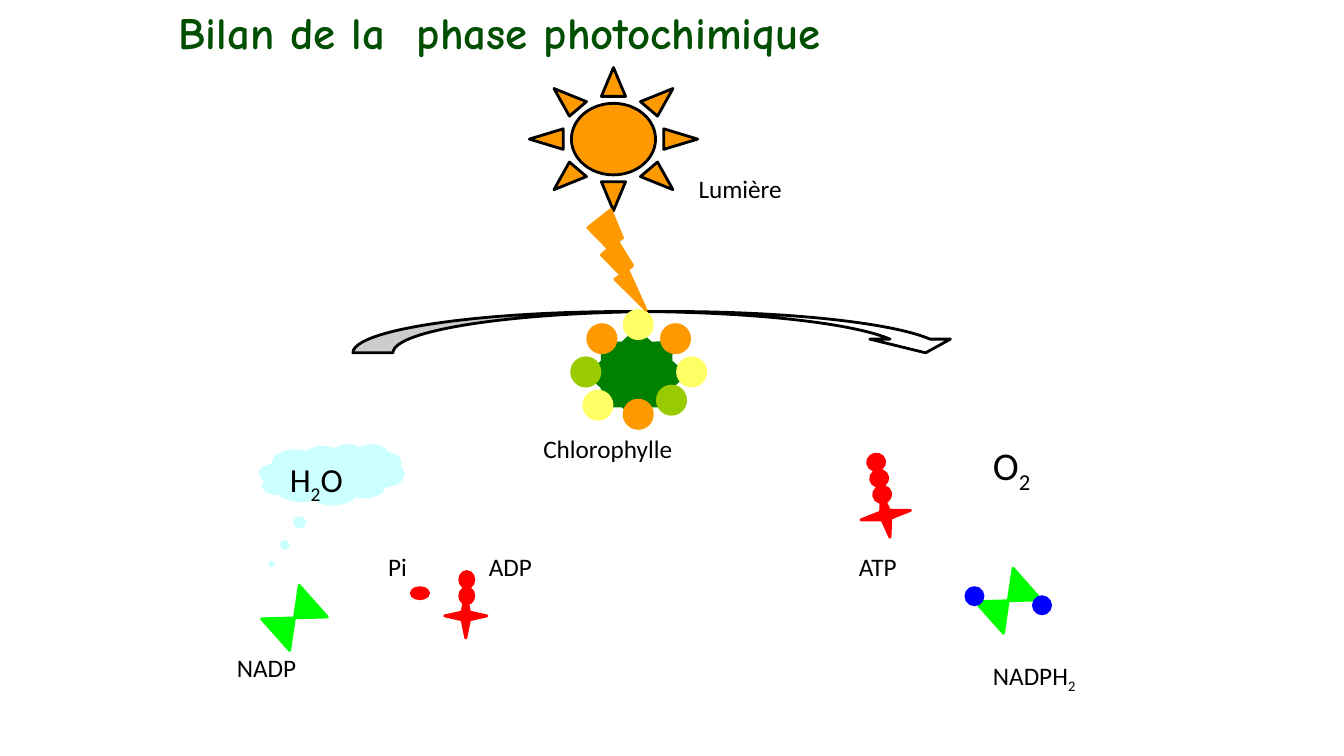
"""Draw the summary slide of the photochemical phase of photosynthesis."""
import pptx
import pptx.dml.color
import pptx.enum.shapes
import pptx.enum.text
import pptx.util

Inches = pptx.util.Inches
RGBColor = pptx.dml.color.RGBColor
Shape = pptx.enum.shapes.MSO_SHAPE

BLACK = RGBColor(0x00, 0x00, 0x00)
WHITE = RGBColor(0xFF, 0xFF, 0xFF)
TITLE_GREEN = RGBColor(0x00, 0x4E, 0x00)
LEAF_GREEN = RGBColor(0x00, 0x80, 0x00)
BRIGHT_GREEN = RGBColor(0x00, 0xFF, 0x00)
LIME = RGBColor(0x99, 0xCC, 0x00)
ORANGE = RGBColor(0xFF, 0x99, 0x00)
YELLOW = RGBColor(0xFF, 0xFF, 0x66)
RED = RGBColor(0xFF, 0x00, 0x00)
BLUE = RGBColor(0x00, 0x00, 0xFF)
WATER = RGBColor(0xCC, 0xFF, 0xFF)


class Diagram:
    """Hold the fonts, the current slide and the group being filled."""

    title_font = "Comic Neue"
    body_font = "Calibri"
    line_width = pptx.util.Pt(2)

    def __init__(self, deck):
        self.page = deck.slides.add_slide(deck.slide_layouts[5])
        self.shapes = self.page.shapes

    def start_group(self):
        self.shapes = self.page.shapes.add_group_shape().shapes

    def title(self, text, left, top, width, height):
        box = self.page.shapes.title
        box.left, box.top = Inches(left), Inches(top)
        box.width, box.height = Inches(width), Inches(height)
        box.fill.solid()
        box.fill.fore_color.rgb = WHITE
        self.add_text(box, [text], 32, self.title_font, TITLE_GREEN, True)

    def add_text(self, box, pieces, size, font=body_font, color=BLACK, bold=False):
        frame = box.text_frame
        frame.vertical_anchor = pptx.enum.text.MSO_ANCHOR.TOP
        para = frame.paragraphs[0]
        para.alignment = pptx.enum.text.PP_ALIGN.LEFT
        for piece in pieces:
            span = para.add_run()
            span.text = piece
            span.font.name = font
            span.font.size = pptx.util.Pt(size)
            span.font.bold = bold
            span.font.color.rgb = color
            if piece.isdigit():
                span.font._element.set("baseline", "-25000")

    def shape(self, kind, left, top, width, height, fill, line=None,
              rotation=0, adjustments=()):
        item = self.shapes.add_shape(
            kind, Inches(left), Inches(top), Inches(width), Inches(height))
        item.shadow.inherit = False
        item.fill.solid()
        item.fill.fore_color.rgb = fill
        item.line.color.rgb = fill if line is None else line
        item.line.width = self.line_width
        item.rotation = rotation
        for index, value in enumerate(adjustments):
            item.adjustments[index] = value
        return item

    def label(self, pieces, left, top, width, height=0.41, size=18):
        box = self.shapes.add_textbox(
            Inches(left), Inches(top), Inches(width), Inches(height))
        box.text_frame.word_wrap = False
        box.text_frame.auto_size = pptx.enum.text.MSO_AUTO_SIZE.SHAPE_TO_FIT_TEXT
        self.add_text(box, pieces, size)

    def carrier(self, left, top):
        self.shape(Shape.FLOWCHART_COLLATE, left, top, 0.42, 0.5, BRIGHT_GREEN,
                   rotation=48.4)

    def adenosine(self, left, top, width, height, rotation):
        self.shape(Shape.STAR_4_POINT, left, top, width, height, RED,
                   rotation=rotation, adjustments=[0.125])

    def phosphates(self, count, left, top, step, height, rotation):
        for index in range(count):
            self.shape(Shape.OVAL, left - step * index, top - 0.16 * index,
                       0.16, height, RED, rotation=rotation)


def draw_products(diagram):
    diagram.start_group()
    diagram.carrier(9.79, 5.71)
    for left, top in [(9.58, 5.83), (10.25, 5.92)]:
        diagram.shape(Shape.OVAL, left, top, 0.17, 0.17, BLUE)
    diagram.adenosine(8.56, 4.86, 0.45, 0.5, 259.1)
    diagram.phosphates(3, 8.67, 4.82, 0.03, 0.17, 259.1)
    diagram.label(["O", "2"], 9.75, 4.33, 0.59, 0.57, 28)
    diagram.label(["NADPH", "2"], 9.75, 6.5, 1.04)
    diagram.label(["ATP"], 8.42, 5.42, 0.58)


def draw_reactants(diagram):
    diagram.start_group()
    diagram.label(["ADP"], 4.75, 5.42, 0.63)
    cloud = diagram.shape(Shape.CLOUD_CALLOUT, 2.58, 4.42, 1.42, 0.58, WATER,
                          adjustments=[-0.42, 1.53])
    diagram.add_text(cloud, ["H", "2", "O"], 24)
    diagram.carrier(2.71, 5.88)
    diagram.adenosine(4.4, 5.9, 0.44, 0.42, 270)
    diagram.phosphates(2, 4.55, 5.84, 0, 0.14, 270)
    diagram.shape(Shape.OVAL, 4.08, 5.83, 0.17, 0.11, RED)
    diagram.label(["NADP"], 2.25, 6.42, 0.79)
    diagram.label(["Pi"], 3.75, 5.42, 0.39)


def draw_light(diagram):
    pigments = {
        ORANGE: [(6.56, 3.22), (5.83, 3.22), (6.19, 3.97)],
        YELLOW: [(6.19, 3.08), (6.72, 3.55), (5.79, 3.88)],
        LIME: [(6.52, 3.83), (5.67, 3.55)],
    }
    diagram.start_group()
    diagram.shape(Shape.SUN, 5.25, 0.67, 1.67, 1.42, ORANGE, BLACK)
    diagram.shape(Shape.STAR_8_POINT, 5.83, 3.27, 0.97, 0.89, LEAF_GREEN,
                  adjustments=[0.38])
    for color, places in pigments.items():
        for left, top in places:
            diagram.shape(Shape.OVAL, left, top, 0.28, 0.28, color)
    diagram.shape(Shape.LIGHTNING_BOLT, 5.83, 2.08, 0.58, 1, ORANGE)
    diagram.label(["Chlorophylle"], 5.29, 4.25, 1.49)
    diagram.label(["Lumière"], 6.83, 1.67, 1.03)


def main():
    deck = pptx.Presentation()
    deck.slide_width, deck.slide_height = Inches(13.33), Inches(7.5)
    diagram = Diagram(deck)
    diagram.title("Bilan de la  phase photochimique", 1.67, 0, 10, 0.63)
    diagram.shape(Shape.CURVED_DOWN_ARROW, 3.5, 3.09, 6.08, 0.41, WHITE, BLACK,
                  adjustments=[0.97, 1.95, 0.33])
    draw_products(diagram)
    draw_reactants(diagram)
    draw_light(diagram)
    deck.save("out.pptx")


if __name__ == "__main__":
    main()
